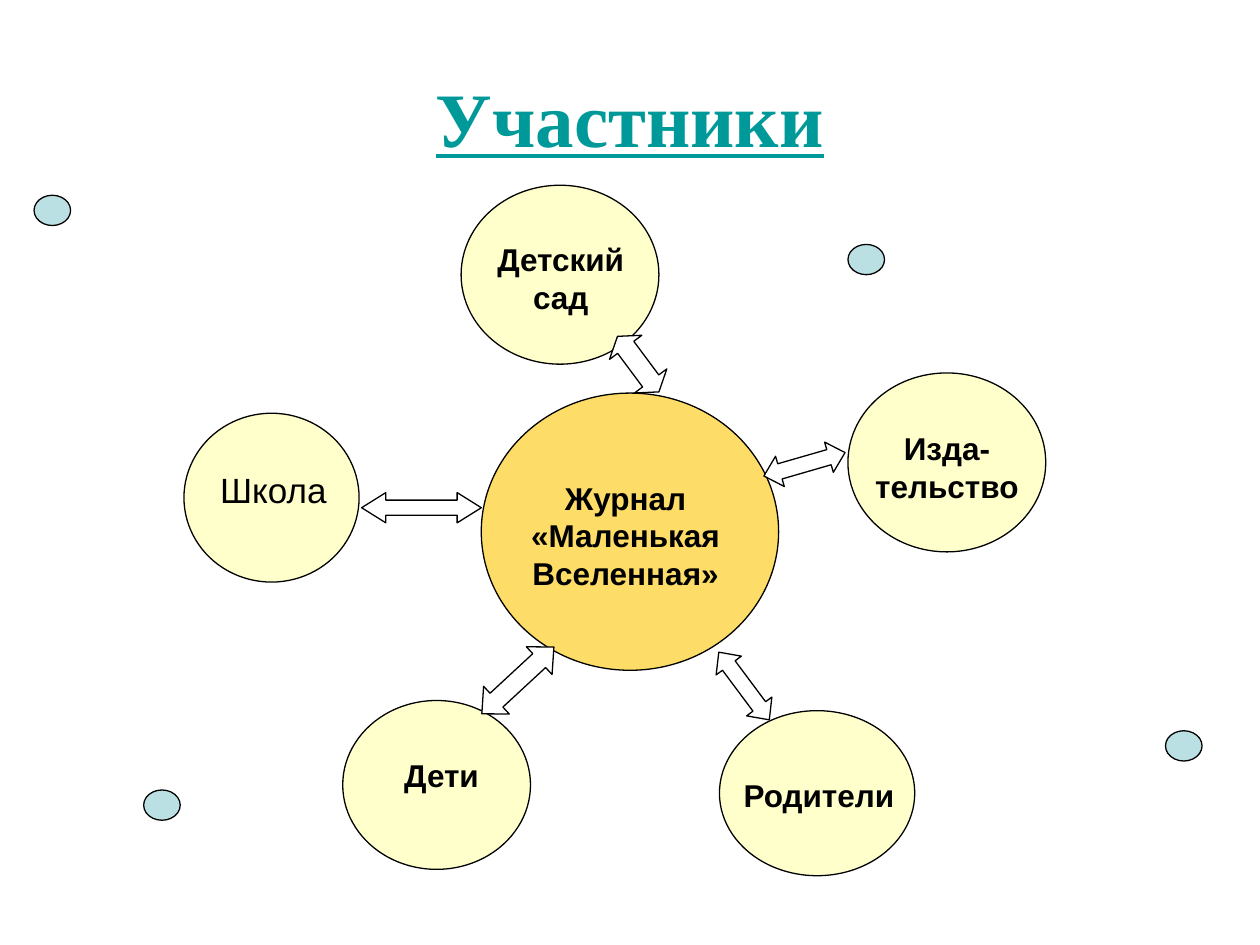
import pptx
import pptx.util
import pptx.dml.color
import pptx.enum.shapes
import pptx.enum.text

RGB = pptx.dml.color.RGBColor
KIND = pptx.enum.shapes.MSO_SHAPE
ALIGN = pptx.enum.text.PP_ALIGN
ANCHOR = pptx.enum.text.MSO_ANCHOR

PX = 9144  # EMU, 100 px to the inch
BLACK = RGB(0x00, 0x00, 0x00)
WHITE = RGB(0xFF, 0xFF, 0xFF)
GOLD = RGB(0xFD, 0xDD, 0x67)
CREAM = RGB(0xFF, 0xFF, 0xCC)
PALE = RGB(0xBB, 0xE0, 0xE3)
TEAL = RGB(0x00, 0x99, 0x99)

# oval, oval fill, label box, label, size, bold, label fill
NODES = [
    ((236, 165, 236, 220), GOLD, (244, 228, 213, 100),
     "Журнал «Маленькая Вселенная»", 18, True, None),
    ((0, 181, 139, 134), CREAM, (0, 220, 142, 43), "Школа", 20, False, None),
    ((126, 409, 149, 134), CREAM, (126, 448, 157, 40), "Дети", 18, True, None),
    ((425, 417, 155, 131), CREAM, (433, 464, 142, 40),
     "Родители", 18, True, CREAM),
    ((527, 149, 157, 142), CREAM, (511, 189, 189, 70),
     "Изда-тельство", 18, True, None),
    ((220, 0, 157, 142), CREAM, (228, 39, 142, 70),
     "Детский сад", 18, True, None),
]

# box, turn in degrees, head length as a share of the height
ARROWS = [
    ((141, 244, 95, 24), 0, 0.8),
    ((226, 378, 78, 30), 317.2, 0.53),
    ((411, 385, 67, 25), 53.3, 0.53),
    ((459, 209, 67, 25), 343.9, 0.53),
    ((333, 126, 55, 32), 53.3, 0.34),
]

DOTS = [(114, 627), (673, 194), (27, 155), (925, 580)]


def inside(area, box):
    """Move a box given relative to an area onto the slide."""
    return area[0] + box[0], area[1] + box[1], box[2], box[3]


def emu(box):
    return [n * PX for n in box]


def add_form(slide, kind, box, fill):
    form = slide.shapes.add_shape(kind, *emu(box))
    form.shadow.inherit = False
    form.fill.solid()
    form.fill.fore_color.rgb = fill
    form.line.color.rgb = BLACK
    form.line.width = pptx.util.Pt(0.75)
    return form


def add_label(slide, box, text, size, bold, color=BLACK, face="Arial"):
    label = slide.shapes.add_textbox(*emu(box))
    frame = label.text_frame
    frame.word_wrap = True
    frame.text = text
    line = frame.paragraphs[0]
    line.alignment = ALIGN.CENTER
    font = line.runs[0].font
    font.name = face
    font.size = pptx.util.Pt(size)
    font.bold = bold
    font.color.rgb = color
    return label


def add_title(slide, area):
    title = add_label(slide, area, "Участники", 44, True, TEAL,
                      "Times New Roman")
    title.text_frame.vertical_anchor = ANCHOR.MIDDLE
    title.text_frame.paragraphs[0].runs[0].font.underline = True


def add_map(slide, area):
    """Draw the journal, its partners and the arrows between them."""
    for oval, fill, box, text, size, bold, back in NODES:
        add_form(slide, KIND.OVAL, inside(area, oval), fill)
        label = add_label(slide, inside(area, box), text, size, bold)
        if back is not None:
            label.fill.solid()
            label.fill.fore_color.rgb = back
    for box, turn, head in ARROWS:
        arrow = add_form(slide, KIND.LEFT_RIGHT_ARROW, inside(area, box), WHITE)
        arrow.rotation = turn
        arrow.adjustments[0] = 0.5
        arrow.adjustments[1] = head


def add_dots(slide, area):
    for left, top in DOTS:
        add_form(slide, KIND.OVAL, inside(area, (left, top, 29, 24)), PALE)


def main():
    deck = pptx.Presentation()
    deck.slide_width, deck.slide_height = 1000 * PX, 750 * PX
    slide = deck.slides.add_slide(deck.slide_layouts[6])
    add_map(slide, (146, 147, 684, 548))
    add_dots(slide, (0, 0, 1000, 750))
    add_title(slide, (50, 30, 900, 125))
    deck.save("out.pptx")


if __name__ == "__main__":
    main()
